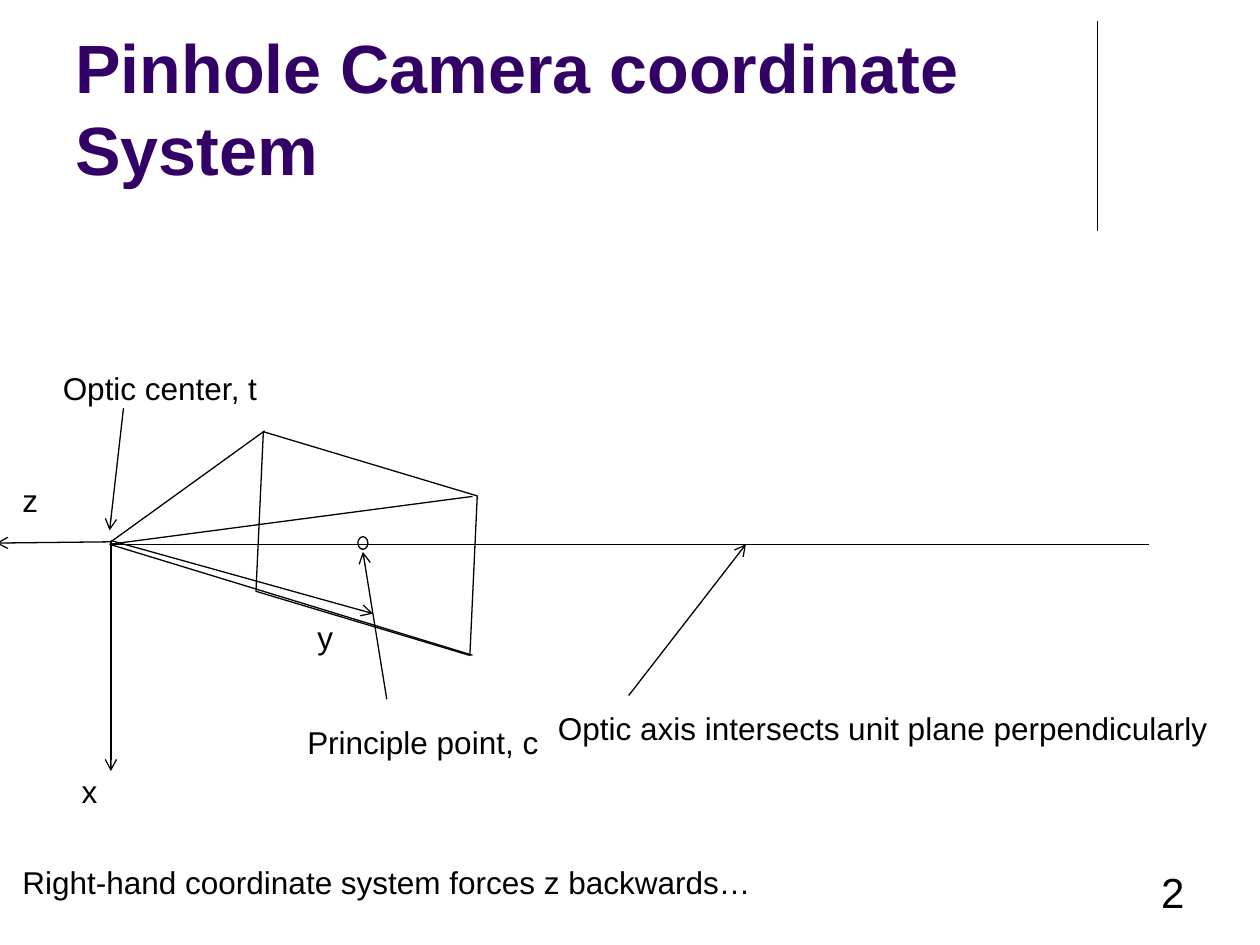
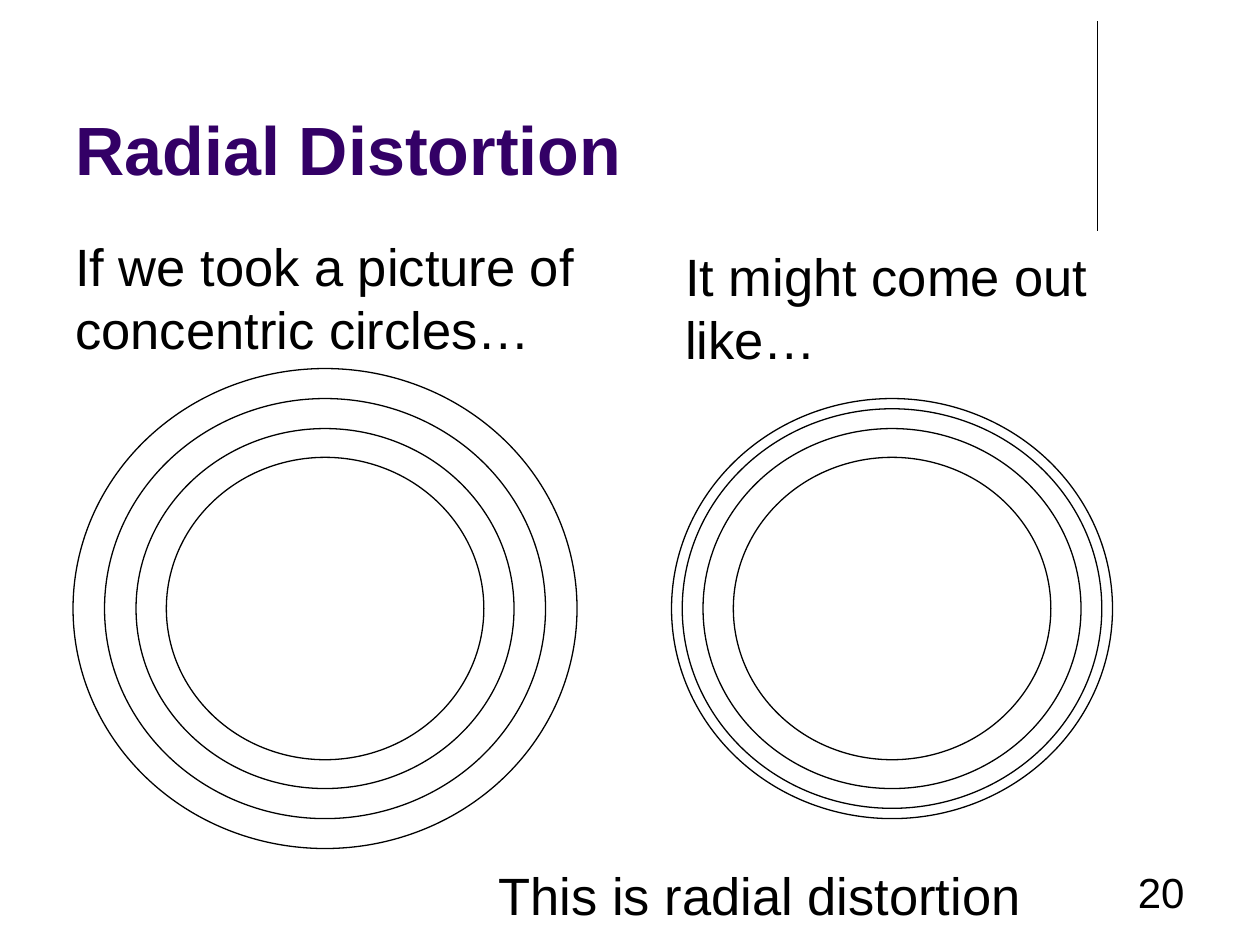
from lxml import etree
from pptx import Presentation
from pptx import util as u
from pptx.dml.color import RGBColor
from pptx.enum import shapes, text
from pptx.oxml.ns import qn

FONT = "Arial"
BLACK = "000000"
TITLE_COLOR = "330066"
LINE_WIDTH = u.Pt(0.75)
LABEL_HEIGHT = 0.4
RING_ASPECT = 1.05


def color(hex_value):
    return RGBColor.from_string(hex_value)


def add_text(s, content, left, top, width, height, size, hex_value=BLACK,
             bold=False, wrap=True, anchor=text.MSO_ANCHOR.TOP,
             align=text.PP_ALIGN.LEFT):
    box = s.shapes.add_textbox(*map(u.Inches, (left, top, width, height)))
    tf = box.text_frame
    tf.word_wrap = wrap
    tf.vertical_anchor = anchor
    p = tf.paragraphs[0]
    p.alignment = align
    r = p.add_run()
    r.text = content
    r.font.name = FONT
    r.font.size = u.Pt(size)
    r.font.bold = bold
    r.font.color.rgb = color(hex_value)
    return box


def add_label(s, content, left, top, width):
    """Add a one-line diagram label whose box fits its text."""
    box = add_text(s, content, left, top, width, LABEL_HEIGHT, 18, wrap=False)
    box.text_frame.auto_size = text.MSO_AUTO_SIZE.SHAPE_TO_FIT_TEXT


def add_line(s, start, end, arrow=False):
    line = s.shapes.add_connector(shapes.MSO_CONNECTOR.STRAIGHT,
                                  *map(u.Inches, (*start, *end)))
    line.line.color.rgb = color(BLACK)
    line.line.width = LINE_WIDTH
    sp_pr = line._element.spPr
    if arrow:
        etree.SubElement(sp_pr.find(qn("a:ln")), qn("a:tailEnd"), type="arrow")
    etree.SubElement(sp_pr, qn("a:effectLst"))


def add_outline(s, preset, left, top, width, height):
    """Add an unfilled preset shape with a thin black line."""
    sp = s.shapes.add_shape(preset, *map(u.Inches, (left, top, width, height)))
    sp.shadow.inherit = False
    sp.fill.background()
    sp.line.color.rgb = color(BLACK)
    sp.line.width = LINE_WIDTH
    return sp


def add_rings(s, center_x, center_y, widths):
    for width in widths:
        height = width / RING_ASPECT
        add_outline(s, shapes.MSO_SHAPE.OVAL, center_x - width / 2,
                    center_y - height / 2, width, height)


def add_slide(prs, title, number):
    """Add a slide with the shared title, side rule and page number."""
    s = prs.slides.add_slide(prs.slide_layouts[6])
    add_line(s, (8.71, 0.17), (8.71, 1.83))
    add_text(s, title, 0.5, 0.13, 8.25, 1.42, 39, TITLE_COLOR, bold=True,
             anchor=text.MSO_ANCHOR.BOTTOM)
    add_text(s, number, 7.17, 6.83, 2.33, 0.5, 24, align=text.PP_ALIGN.RIGHT)
    return s


def add_image_plane(s):
    plane = add_outline(s, shapes.MSO_SHAPE.PARALLELOGRAM,
                        1.87, 3.7, 2.08, 1.23)
    plane.rotation = 16.7
    plane._element.spPr.find(qn("a:xfrm")).set("flipV", "1")


def build_camera_slide(prs):
    s = add_slide(prs, "Pinhole Camera coordinate System", "2")
    add_image_plane(s)

    optic_center = (0.87, 4.32)
    axes_origin = (0.88, 4.29)
    add_line(s, (0.88, 4.3), (2.1, 3.42))
    for ray_end in [(3.75, 5.2), (3.75, 3.94), (9.12, 4.32)]:
        add_line(s, optic_center, ray_end)
    add_outline(s, shapes.MSO_SHAPE.OVAL, 2.84, 4.26, 0.08, 0.1)

    arrows = [
        ((0.98, 3.24), (0.87, 4.21)),
        ((4.99, 5.52), (5.92, 4.32)),
        ((3.07, 5.55), (2.88, 4.38)),
        ((0.88, 4.3), (-0.03, 4.31)),
        (axes_origin, (2.96, 4.87)),
        (axes_origin, (0.88, 6.12)),
    ]
    for start, end in arrows:
        add_line(s, start, end, arrow=True)

    labels = [
        ("Optic center, t", 0.4, 2.88, 1.81),
        ("Optic axis intersects unit plane perpendicularly", 4.33, 5.58, 5.41),
        ("x", 0.55, 6.08, 0.33),
        ("y", 2.42, 4.86, 0.33),
        ("z", 0.08, 3.77, 0.33),
        ("Principle point, c", 2.34, 5.69, 2.05),
        ("Right-hand coordinate system forces z backwards…", 0.08, 6.8, 5.99),
    ]
    for label in labels:
        add_label(s, *label)


def build_distortion_slide(prs):
    s = add_slide(prs, "Radial Distortion", "20")
    add_rings(s, 2.58, 4.83, [4, 3.5, 3, 2.52])
    add_rings(s, 7.08, 4.83, [3.5, 3.33, 3, 2.52])
    captions = [
        ("If we took a picture of concentric circles…", 0.5, 1.81, 4.82),
        ("It might come out like…", 5.34, 1.89, 4.82),
        ("This is radial distortion", 3.86, 6.8, 0.7),
    ]
    for caption, left, top, height in captions:
        add_text(s, caption, left, top, 4.5, height, 30)


def main():
    prs = Presentation()
    prs.slide_width = u.Inches(10)
    prs.slide_height = u.Inches(7.5)
    build_camera_slide(prs)
    build_distortion_slide(prs)
    prs.save("out.pptx")


if __name__ == "__main__":
    main()
